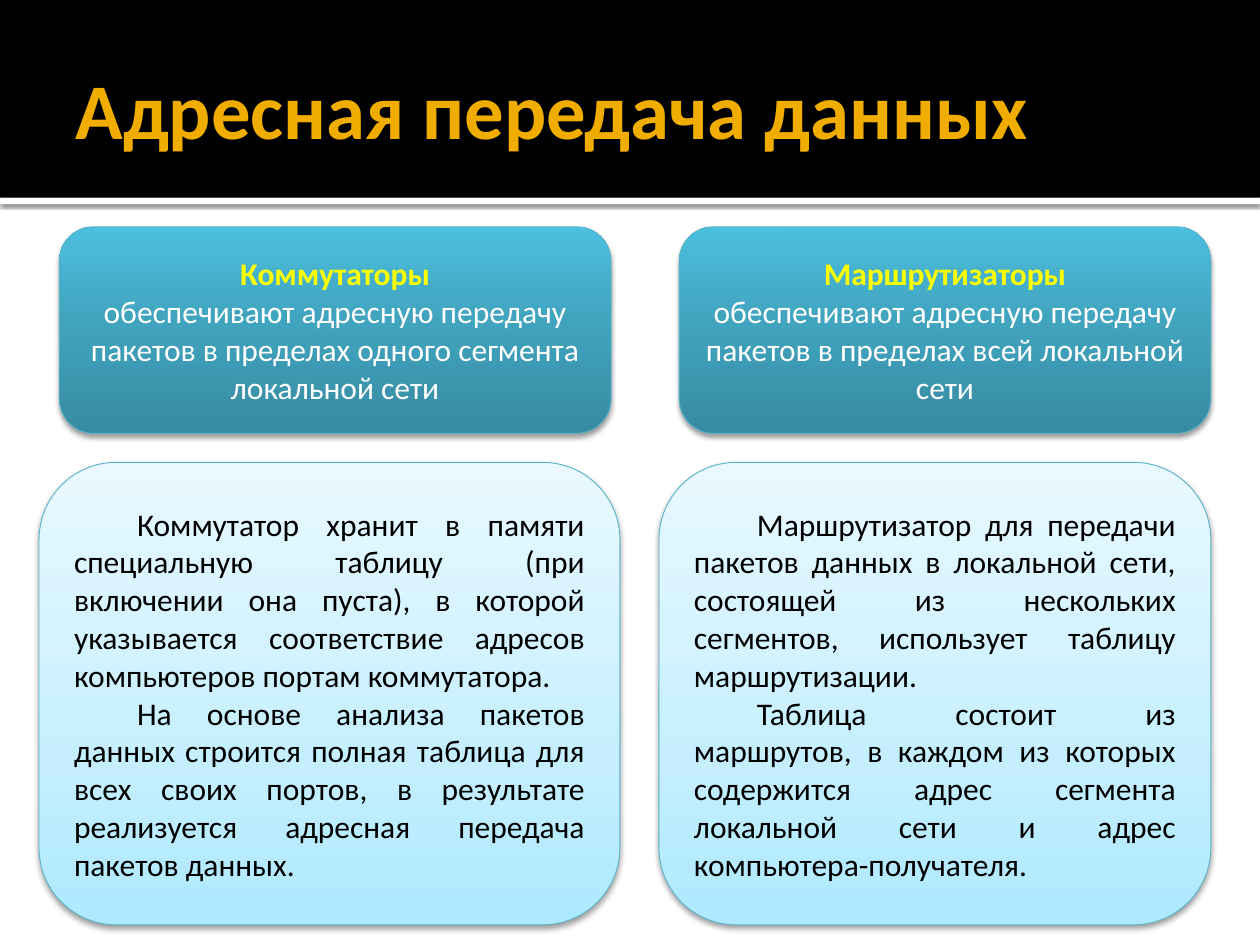
"""Build the slide comparing addressed delivery by switches and routers."""
from copy import deepcopy

from lxml import etree
from pptx import Presentation
from pptx.dml.color import RGBColor
from pptx.enum.shapes import MSO_SHAPE
from pptx.enum.text import MSO_ANCHOR, PP_ALIGN
from pptx.oxml.ns import qn
from pptx.util import Inches, Pt

RECTANGLE, ROUNDED = MSO_SHAPE.RECTANGLE, MSO_SHAPE.ROUNDED_RECTANGLE
MIDDLE = MSO_ANCHOR.MIDDLE
LEFT, CENTER, JUSTIFY = PP_ALIGN.LEFT, PP_ALIGN.CENTER, PP_ALIGN.JUSTIFY

BLACK = RGBColor(0x00, 0x00, 0x00)
WHITE = RGBColor(0xFF, 0xFF, 0xFF)
YELLOW = RGBColor(0xFF, 0xFF, 0x00)
GOLD = RGBColor(0xF0, 0xAD, 0x00)
OUTLINE = RGBColor(0x5B, 0xB3, 0xCA)
DEEP_GRADIENT = (
    (0, RGBColor(0x37, 0x8B, 0xA2)),
    (0.55, RGBColor(0x41, 0xA4, 0xBF)),
    (1, RGBColor(0x4B, 0xBF, 0xDE)),
)
PALE_GRADIENT = (
    (0, RGBColor(0xAD, 0xE9, 0xFF)),
    (0.35, RGBColor(0xC5, 0xEF, 0xFF)),
    (1, RGBColor(0xE9, 0xF9, 0xFF)),
)

FONT = "Calibri"
SLIDE_WIDTH, SLIDE_HEIGHT = 10, 7.5
BANNER_HEIGHT, RULE_HEIGHT = 1.57, 0.05
HEADER_ROW = (1.8, 1.64)
DETAIL_ROW = (3.67, 3.67)

TITLE = "Адресная передача данных"
DEVICES = [
    {
        "header_column": (0.47, 4.38),
        "detail_column": (0.31, 4.61),
        "header": [
            "Коммутаторы",
            "обеспечивают адресную передачу пакетов в пределах одного сегмента локальной сети",
        ],
        "details": [
            "Коммутатор хранит в памяти специальную таблицу (при включении она пуста), "
            "в которой указывается соответствие адресов компьютеров портам коммутатора.",
            "На основе анализа пакетов данных строится полная таблица для всех своих портов, "
            "в результате реализуется адресная передача пакетов данных.",
        ],
    },
    {
        "header_column": (5.39, 4.22),
        "detail_column": (5.23, 4.38),
        "header": [
            "Маршрутизаторы",
            "обеспечивают адресную передачу пакетов в пределах всей локальной сети",
        ],
        "details": [
            "Маршрутизатор для передачи пакетов данных в локальной сети, состоящей из "
            "нескольких сегментов, использует таблицу маршрутизации.",
            "Таблица состоит из маршрутов, в каждом из которых содержится адрес сегмента "
            "локальной сети и адрес компьютера-получателя.",
        ],
    },
]


def add_shadow(shape, opacity, blur, distance):
    effects = shape._element.spPr.find(qn("a:effectLst"))
    shadow = etree.SubElement(
        effects, qn("a:outerShdw"), blurRad=str(Pt(blur)), dist=str(Pt(distance)),
        dir="5400000", rotWithShape="0")
    color = etree.SubElement(shadow, qn("a:srgbClr"), val=str(BLACK))
    etree.SubElement(color, qn("a:alpha"), val=str(opacity * 1000))


def fill_gradient(shape, stops):
    shape.fill.gradient()
    shape.fill.gradient_angle = 90
    stop_list = shape._element.spPr.find(".//" + qn("a:gsLst"))
    stop_list.append(deepcopy(stop_list[0]))
    for stop, (position, color) in zip(shape.fill.gradient_stops, stops):
        stop.position = position
        stop.color.rgb = color


def write_text(shape, lines, size, alignment, colors, bold_first):
    frame = shape.text_frame
    frame.word_wrap = True
    frame.vertical_anchor = MIDDLE
    frame.text = "\n".join(lines)
    for index, (paragraph, color) in enumerate(zip(frame.paragraphs, colors)):
        paragraph.alignment = alignment
        font = paragraph.runs[0].font
        font.name, font.size = FONT, Pt(size)
        font.bold = bold_first and index == 0
        font.color.rgb = color


def add_band(slide, top, height, color):
    band = slide.shapes.add_shape(
        RECTANGLE, 0, Inches(top), Inches(SLIDE_WIDTH), Inches(height))
    band.shadow.inherit = False
    band.fill.solid()
    band.fill.fore_color.rgb = color
    band.line.fill.background()
    return band


def add_card(slide, column, row, gradient, blur):
    left, width = column
    top, height = row
    card = slide.shapes.add_shape(
        ROUNDED, Inches(left), Inches(top), Inches(width), Inches(height))
    fill_gradient(card, gradient)
    card.line.color.rgb = OUTLINE
    card.line.width = Pt(0.5)
    card.shadow.inherit = False
    add_shadow(card, 38, blur, 2)
    return card


def main():
    presentation = Presentation()
    presentation.slide_width = Inches(SLIDE_WIDTH)
    presentation.slide_height = Inches(SLIDE_HEIGHT)
    slide = presentation.slides.add_slide(presentation.slide_layouts[6])

    rule = add_band(slide, BANNER_HEIGHT, RULE_HEIGHT, WHITE)
    add_shadow(rule, 60, 2.5, 0.8)
    add_band(slide, 0, BANNER_HEIGHT, BLACK)
    title = slide.shapes.add_textbox(Inches(0.5), Inches(0.17), Inches(9), Inches(1.37))
    write_text(title, [TITLE], 45, LEFT, [GOLD], True)

    for device in DEVICES:
        header = add_card(slide, device["header_column"], HEADER_ROW, DEEP_GRADIENT, 3.1)
        write_text(header, device["header"], 18, CENTER, [YELLOW, WHITE], True)
    for device in DEVICES:
        details = add_card(slide, device["detail_column"], DETAIL_ROW, PALE_GRADIENT, 3.5)
        write_text(details, device["details"], 18, JUSTIFY, [BLACK, BLACK], False)
        for paragraph in details.text_frame.paragraphs:
            paragraph._p.get_or_add_pPr().set("indent", str(Inches(0.5)))

    presentation.save("out.pptx")


if __name__ == "__main__":
    main()
